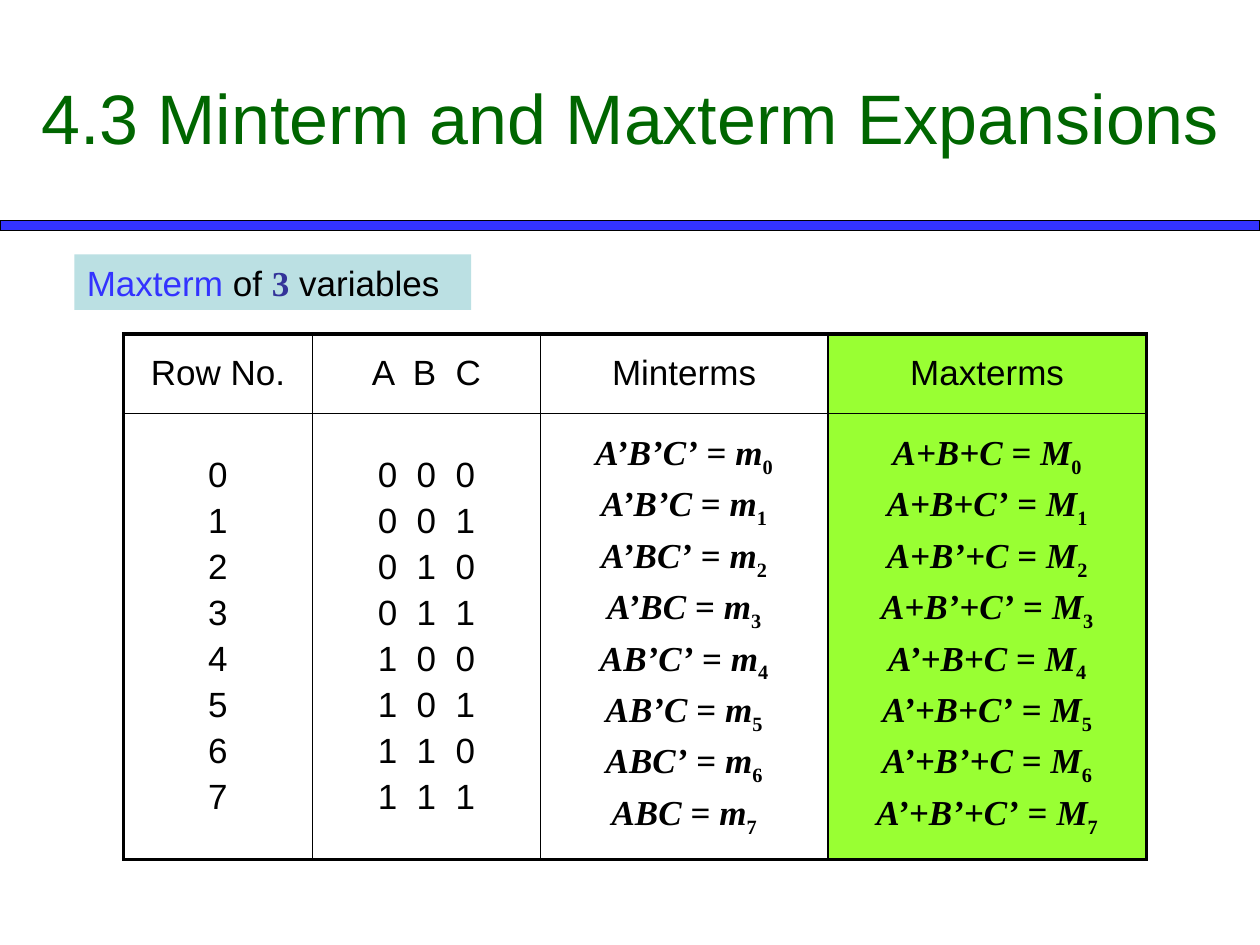
from dataclasses import dataclass
from itertools import product

from lxml.etree import SubElement as Sub
from pptx import Presentation
from pptx.dml.color import RGBColor as RGB
from pptx.enum.shapes import MSO_SHAPE as Shape
from pptx.enum.text import MSO_ANCHOR as Anchor, PP_ALIGN as Align
from pptx.oxml.ns import qn
from pptx.util import Inches, Pt


@dataclass(frozen=True)
class Theme:
    """Hold the colours, fonts and sizes of the slide."""
    ink: str = "000000"
    green: str = "006600"
    blue: str = "3333FF"
    navy: str = "333399"
    pale: str = "BBE0E3"
    lime: str = "99FF33"
    sans: str = "Arial"
    serif: str = "Times New Roman"
    head: int = 40
    body: int = 20
    thin: float = 1
    thick: float = 2.25


T = Theme()
WIDE, HIGH = Inches(10), Inches(7.5)
COLS = (1.5, 1.81, 2.28, 2.53)
ROWS = (0.63, 3.54)
HEADS = ("Row No.", "A  B  C", "Minterms", "Maxterms")


def area(left, top, width, height):
    """Turn shares of the slide into a box of lengths."""
    return (round(left * WIDE), round(top * HIGH),
            round(width * WIDE), round(height * HIGH))


def style(run, color=T.ink, face=T.sans, size=T.body, bold=False, italic=False):
    """Set the font of a run."""
    font = run.font
    font.name, font.size, font.bold, font.italic = face, Pt(size), bold, italic
    font.color.rgb = RGB.from_string(color)


def write(para, parts):
    """Add styled runs to a paragraph."""
    for text, look in parts:
        run = para.add_run()
        run.text = text
        style(run, **look)


def block(slide, box, fill):
    """Place a plain filled rectangle."""
    rect = slide.shapes.add_shape(Shape.RECTANGLE, *box)
    rect.shadow.inherit = False
    rect.fill.solid()
    rect.fill.fore_color.rgb = RGB.from_string(fill)
    rect.line.fill.background()
    return rect


def title(slide, box):
    """Place the slide title."""
    frame = slide.shapes.add_textbox(*box).text_frame
    frame.word_wrap = True
    frame.vertical_anchor = Anchor.MIDDLE
    frame.text = "4.3 Minterm and Maxterm Expansions"
    para = frame.paragraphs[0]
    para.alignment = Align.CENTER
    style(para.runs[0], T.green, size=T.head)


def rule(slide, box):
    """Place the bar under the title."""
    bar = block(slide, box, T.blue)
    bar.line.color.rgb = RGB.from_string(T.ink)
    bar.line.width = Pt(0.75)


def label(slide, box):
    """Place the tinted caption above the table."""
    frame = block(slide, box, T.pale).text_frame
    frame.word_wrap = True
    frame.vertical_anchor = Anchor.MIDDLE
    para = frame.paragraphs[0]
    para.alignment = Align.LEFT
    write(para, [("Maxterm ", {"color": T.blue}), ("of ", {}),
                 ("3", {"color": T.navy, "face": T.serif, "bold": True}),
                 (" variables", {})])


def term(para, left, name, index):
    """Write one equation with a subscript index."""
    bold = {"face": T.serif, "bold": True}
    slant = {**bold, "italic": True}
    write(para, [(left, slant), (" = ", bold), (name, slant), (str(index), bold)])
    para.runs[-1]._r.get_or_add_rPr().set("baseline", "-25000")


def space(para):
    """Centre a paragraph with a fifth of a line before it."""
    para.alignment = Align.CENTER
    gap = Sub(para._p.get_or_add_pPr(), qn("a:spcBef"))
    Sub(gap, qn("a:spcPct"), val="20000")


def edge(cell, row, col):
    """Draw the cell borders, thick on the outside of the table."""
    outer = {"L": col == 0, "R": col == len(COLS) - 1,
             "T": row == 0, "B": row == len(ROWS) - 1}
    props = cell._tc.get_or_add_tcPr()
    for side, thick in outer.items():
        width = Pt(T.thick if thick else T.thin)
        line = Sub(props, qn(f"a:ln{side}"), w=str(width))
        Sub(Sub(line, qn("a:solidFill")), qn("a:srgbClr"), val=T.ink)


def fill(cell, col):
    """Write the eight entries of a body column."""
    frame = cell.text_frame
    for num, bits in enumerate(product((0, 1), repeat=3)):
        para = frame.paragraphs[0] if num == 0 else frame.add_paragraph()
        space(para)
        if col == 0:
            write(para, [(str(num), {})])
        elif col == 1:
            write(para, [("  ".join(map(str, bits)), {})])
        else:
            prime = col - 2
            marks = [v + "’" * (b == prime) for v, b in zip("ABC", bits)]
            term(para, ("", "+")[prime].join(marks), "mM"[prime], num)


def table(slide, box):
    """Place the table of minterms and maxterms."""
    grid = slide.shapes.add_table(len(ROWS), len(COLS), *box).table
    grid.first_row = grid.horz_banding = False
    for col, share in zip(grid.columns, COLS):
        col.width = round(box[2] * share / sum(COLS))
    for row, share in zip(grid.rows, ROWS):
        row.height = round(box[3] * share / sum(ROWS))
    for row, col in product(range(len(ROWS)), range(len(COLS))):
        cell = grid.cell(row, col)
        cell.vertical_anchor = Anchor.MIDDLE
        edge(cell, row, col)
        if col == len(COLS) - 1:
            cell.fill.solid()
            cell.fill.fore_color.rgb = RGB.from_string(T.lime)
        else:
            cell.fill.background()
        if row:
            fill(cell, col)
        else:
            para = cell.text_frame.paragraphs[0]
            space(para)
            write(para, [(HEADS[col], {})])


def main():
    """Build and save the slide."""
    deck = Presentation()
    deck.slide_width, deck.slide_height = WIDE, HIGH
    slide = deck.slides.add_slide(deck.slide_layouts[6])
    rule(slide, area(0, 1.75 / 7.5, 1, 0.08 / 7.5))
    title(slide, area(0, 0.04, 1, 1.25 / 7.5))
    table(slide, area(0.098, 2.65 / 7.5, 0.812, 4.17 / 7.5))
    label(slide, area(0.059, 2.02 / 7.5, 0.315, 0.44 / 7.5))
    deck.save("out.pptx")


if __name__ == "__main__":
    main()
